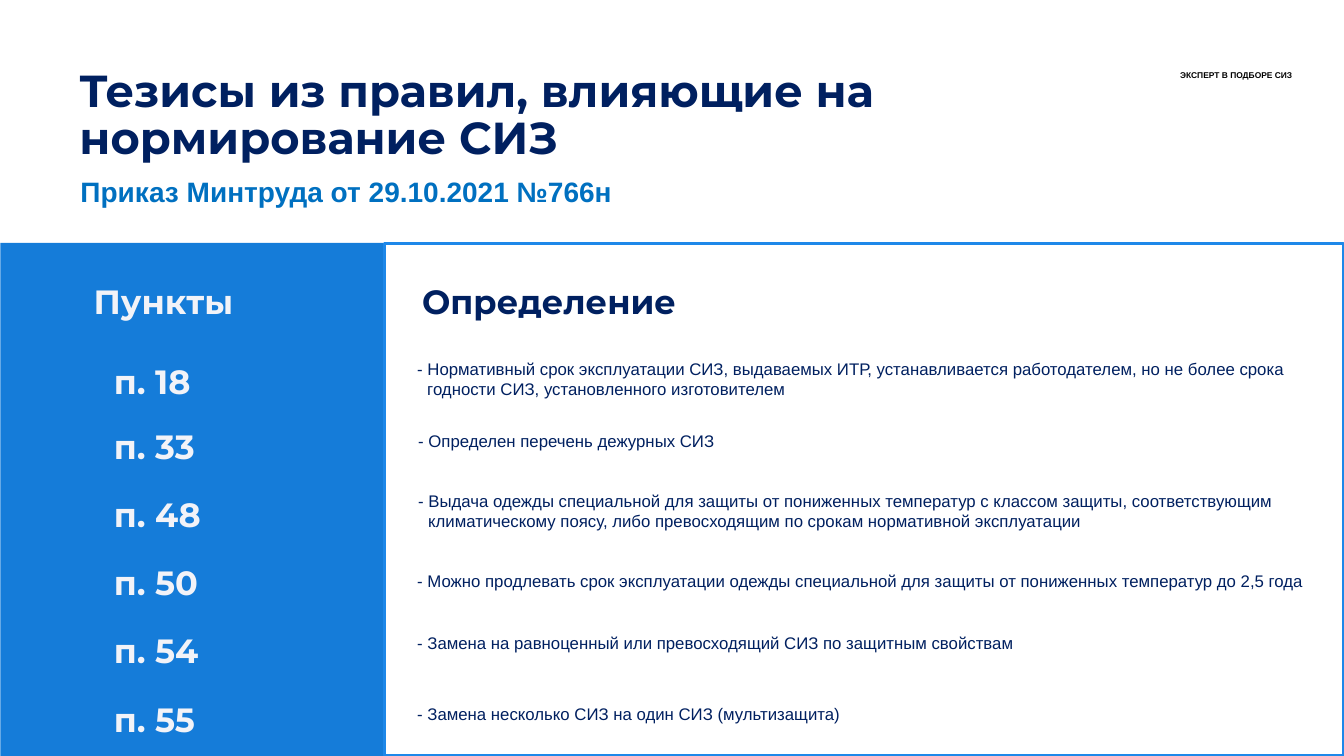
from pptx import Presentation
from pptx.dml.color import RGBColor
from pptx.enum.shapes import MSO_SHAPE
from pptx.enum.text import MSO_ANCHOR, MSO_AUTO_SIZE, PP_ALIGN
from pptx.util import Pt

COLORS = {
    "navy": "002060",
    "sky": "0070C0",
    "blue": "157CD9",
    "edge": "1E88E9",
    "pale": "F2F3F8",
    "black": "000000",
}

TAG = {"name": "Arial", "size": Pt(6), "bold": True}
TITLE = {"name": "Montserrat", "size": Pt(32), "bold": True}
ORDER = {"name": "Arial", "size": Pt(20), "bold": True}
HEAD = {"name": "Montserrat", "size": Pt(24), "bold": True}
NOTE = {"name": "Arial", "size": Pt(12), "bold": False}

# Clause, its top, definition, its left, top and height
CLAUSES = [
    ("п. 18", 244, "- Нормативный срок эксплуатации СИЗ, выдаваемых ИТР, "
     "устанавливается работодателем, но не более срока годности СИЗ, "
     "установленного изготовителем", 290.9, 252.7, 51),
    ("п. 33", 290.2, "- Определен перечень дежурных СИЗ", 291.6, 303.8, 36),
    ("п. 48", 339.1, "- Выдача одежды специальной для защиты от пониженных "
     "температур с классом защиты, соответствующим климатическому поясу, "
     "либо превосходящим по срокам нормативной эксплуатации",
     291.6, 347, 36),
    ("п. 50", 387.4, "- Можно продлевать срок эксплуатации одежды специальной "
     "для защиты от пониженных температур до 2,5 года", 290.9, 403.9, 21.6),
    ("п. 54", 436.3, "- Замена на равноценный или превосходящий СИЗ по "
     "защитным свойствам", 290.9, 448.6, 36),
    ("п. 55", 485.3, "- Замена несколько СИЗ на один СИЗ (мультизащита)",
     290.9, 499, 36),
]


def color(name):
    return RGBColor.from_string(COLORS[name])


def add_text(slide, text, box, form, tint, lead=None, hang=0, grow=False):
    """Add a text box; lead is the line pitch and hang the hanging indent."""
    frame = slide.shapes.add_textbox(*map(Pt, box)).text_frame
    frame.word_wrap = True
    frame.vertical_anchor = MSO_ANCHOR.TOP
    frame.auto_size = (MSO_AUTO_SIZE.SHAPE_TO_FIT_TEXT if grow
                       else MSO_AUTO_SIZE.NONE)
    para = frame.paragraphs[0]
    para.alignment = PP_ALIGN.LEFT
    if lead:
        para.line_spacing = Pt(lead)
    if hang:
        props = para._p.get_or_add_pPr()
        props.set("marL", str(Pt(hang)))
        props.set("indent", str(-Pt(hang)))
    run = para.add_run()
    run.text = text
    for key, value in form.items():
        setattr(run.font, key, value)
    run.font.color.rgb = color(tint)


def add_panel(slide, box, fill=None, edge=None):
    panel = slide.shapes.add_shape(MSO_SHAPE.RECTANGLE, *map(Pt, box))
    panel.shadow.inherit = False
    if fill:
        panel.fill.solid()
        panel.fill.fore_color.rgb = color(fill)
    else:
        panel.fill.background()
    if edge:
        panel.line.color.rgb = color(edge)
        panel.line.width = Pt(2)
    else:
        panel.line.fill.background()


def add_head(slide, text, left, top, tint):
    add_text(slide, text, (left, top, 433.4, 46.8), HEAD, tint, lead=39)


def main():
    deck = Presentation()
    deck.slide_width, deck.slide_height = Pt(960), Pt(540)
    slide = deck.slides.add_slide(deck.slide_layouts[6])

    add_text(slide, "ЭКСПЕРТ В ПОДБОРЕ СИЗ", (835.9, 46.8, 104.4, 14.4),
             TAG, "black", grow=True)
    add_text(slide, "Тезисы из правил, влияющие на нормирование СИЗ",
             (49.7, 45.4, 598.3, 89.3), TITLE, "navy", lead=34)
    add_text(slide, "Приказ Минтруда от 29.10.2021 №766н",
             (50.4, 131.8, 481.7, 21.6), ORDER, "sky", lead=13, grow=True)

    add_panel(slide, (0.3, 173.5, 274.3, 366.5), fill="blue")
    add_panel(slide, (274.7, 174.2, 685, 365.3), edge="edge")
    add_head(slide, "Определение", 294.5, 187.2, "navy")
    add_head(slide, "Пункты", 59.8, 187.2, "pale")

    for clause, top, note, left, level, height in CLAUSES:
        add_head(slide, clause, 74.2, top, "pale")
        add_text(slide, note, (left, level, 654.5, height), NOTE, "navy",
                 hang=7.2, grow=True)

    deck.save("out.pptx")


if __name__ == "__main__":
    main()
